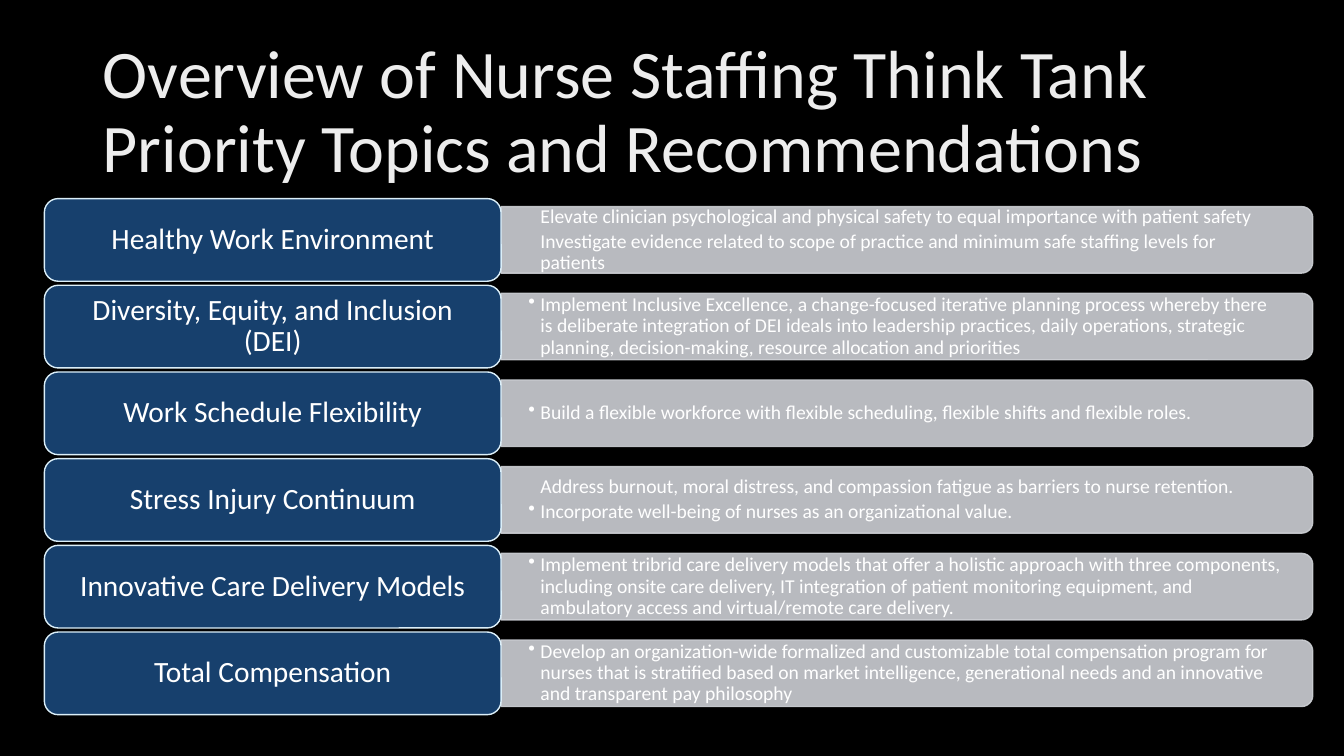
from lxml.etree import SubElement
from pptx import Presentation
from pptx.dml.color import RGBColor
from pptx.enum.shapes import MSO_SHAPE as Form
from pptx.enum.text import MSO_ANCHOR as Anchor, MSO_AUTO_SIZE as Fit, PP_ALIGN as Align
from pptx.oxml.ns import qn
from pptx.util import Inches, Pt

# Each topic: label, then (text, shows a bullet)
TOPICS = [
    ("Healthy Work Environment", [
        ("Elevate clinician psychological and physical safety to equal importance with patient safety", False),
        ("Investigate evidence related to scope of practice and minimum safe staffing levels for patients", False)]),
    ("Diversity, Equity, and Inclusion (DEI)", [
        ("Implement Inclusive Excellence, a change-focused iterative planning process whereby there is "
         "deliberate integration of DEI ideals into leadership practices, daily operations, strategic "
         "planning, decision-making, resource allocation and priorities", True)]),
    ("Work Schedule Flexibility", [
        ("Build a flexible workforce with flexible scheduling, flexible shifts and flexible roles.", True)]),
    ("Stress Injury Continuum", [
        ("Address burnout, moral distress, and compassion fatigue as barriers to nurse retention.", False),
        ("Incorporate well-being of nurses as an organizational value.", True)]),
    ("Innovative Care Delivery Models", [
        ("Implement tribrid care delivery models that offer a holistic approach with three components, "
         "including onsite care delivery, IT integration of patient monitoring equipment, and "
         "ambulatory access and virtual/remote care delivery.", True)]),
    ("Total Compensation", [
        ("Develop an organization-wide formalized and customizable total compensation program for "
         "nurses that is stratified based on market intelligence, generational needs and an "
         "innovative and transparent pay philosophy", True)]),
]


def color(code):
    return RGBColor.from_string(code)


class Deck:
    font, white, navy, pale, gray = "Calibri", "FFFFFF", "17406D", "DBEFF9", "CCCFD4"

    def __init__(self, slide):
        self.slide = slide
        back = slide.background.fill
        back.solid()
        back.fore_color.rgb = color("000000")

    def frame(self, shape, side, edge):
        frame = shape.text_frame
        frame.word_wrap = True
        frame.auto_size = Fit.NONE
        frame.vertical_anchor = Anchor.MIDDLE
        frame.margin_left = frame.margin_right = Inches(side)
        frame.margin_top = frame.margin_bottom = Inches(edge)
        return frame

    def add_text(self, para, text, size, align=Align.LEFT):
        para.alignment = align
        para.line_spacing = 0.9
        run = para.add_run()
        run.text = text
        run.font.name = self.font
        run.font.size = Pt(size)
        run.font.color.rgb = color(self.white)
        return run

    def title(self, text):
        shape = self.slide.shapes.title
        shape.left, shape.top, shape.width, shape.height = map(Inches, (0.92, 0.4, 11.5, 1.45))
        run = self.add_text(self.frame(shape, 0.1, 0.05).paragraphs[0], text, 48.6)
        # Three-stop gradient on the letters
        fill = run.font.fill
        fill.gradient()
        grad = run.font._element.find(qn("a:gradFill"))
        stops = grad.find(qn("a:gsLst"))
        stops.clear()
        for pos, code in ((0, "BFBFBF"), (28, "EDEDED"), (100, "FFFFFF")):
            stop = SubElement(stops, qn("a:gs"), pos=str(pos * 1000))
            SubElement(stop, qn("a:srgbClr"), val=code)
        grad.find(qn("a:lin")).set("ang", str(80 * 60000))

    def block(self, form, x, y, w, h, fill, line):
        shape = self.slide.shapes.add_shape(form, Inches(x), Inches(y), Inches(w), Inches(h))
        shape.shadow.inherit = False
        shape.fill.solid()
        shape.fill.fore_color.rgb = color(fill)
        shape.line.color.rgb = color(line)
        shape.line.width = Pt(1)
        return shape

    def panel(self, x, mid, w, h):
        # A quarter turn puts the rounded corners on the right
        shape = self.block(Form.ROUND_2_SAME_RECTANGLE, x + (w - h) / 2, mid - w / 2,
                           h, w, self.gray, self.gray)
        shape.rotation = 90
        for tint in shape._element.spPr.iter(qn("a:srgbClr")):
            SubElement(tint, qn("a:alpha"), val="90000")

    def points(self, x, mid, w, h, items):
        box = self.slide.shapes.add_textbox(Inches(x), Inches(mid - h / 2), Inches(w), Inches(h))
        frame = self.frame(box, 0.27, 0.14)
        for i, (text, dot) in enumerate(items):
            para = frame.add_paragraph() if i else frame.paragraphs[0]
            para.space_after = Pt(2.5)
            props = para._p.get_or_add_pPr()
            props.set("marL", str(Inches(0.12)))
            props.set("indent", str(Inches(-0.12 if dot else 0)))
            if dot:
                SubElement(props, qn("a:buChar"), char="•")
            else:
                SubElement(props, qn("a:buNone"))
            self.add_text(para, text, 14)

    def label(self, x, mid, w, h, text):
        shape = self.block(Form.ROUNDED_RECTANGLE, x, mid - h / 2, w, h, self.navy, self.pale)
        self.add_text(self.frame(shape, 0.13, 0.08).paragraphs[0], text, 21, Align.CENTER)


def main():
    prs = Presentation()
    prs.slide_width, prs.slide_height = Inches(13.33), Inches(7.5)
    deck = Deck(prs.slides.add_slide(prs.slide_layouts[5]))
    deck.title("Overview of Nurse Staffing Think Tank Priority Topics and Recommendations")

    # One row per topic, evenly stepped down the slide
    first, step = 2.38, 0.86
    for row, (name, items) in enumerate(TOPICS):
        mid = first + row * step
        deck.panel(4.97, mid, 8.05, 0.66)
        deck.points(4.97, mid, 8.02, 0.59, items)
        deck.label(0.44, mid, 4.53, 0.82, name)

    prs.save("out.pptx")


if __name__ == "__main__":
    main()
